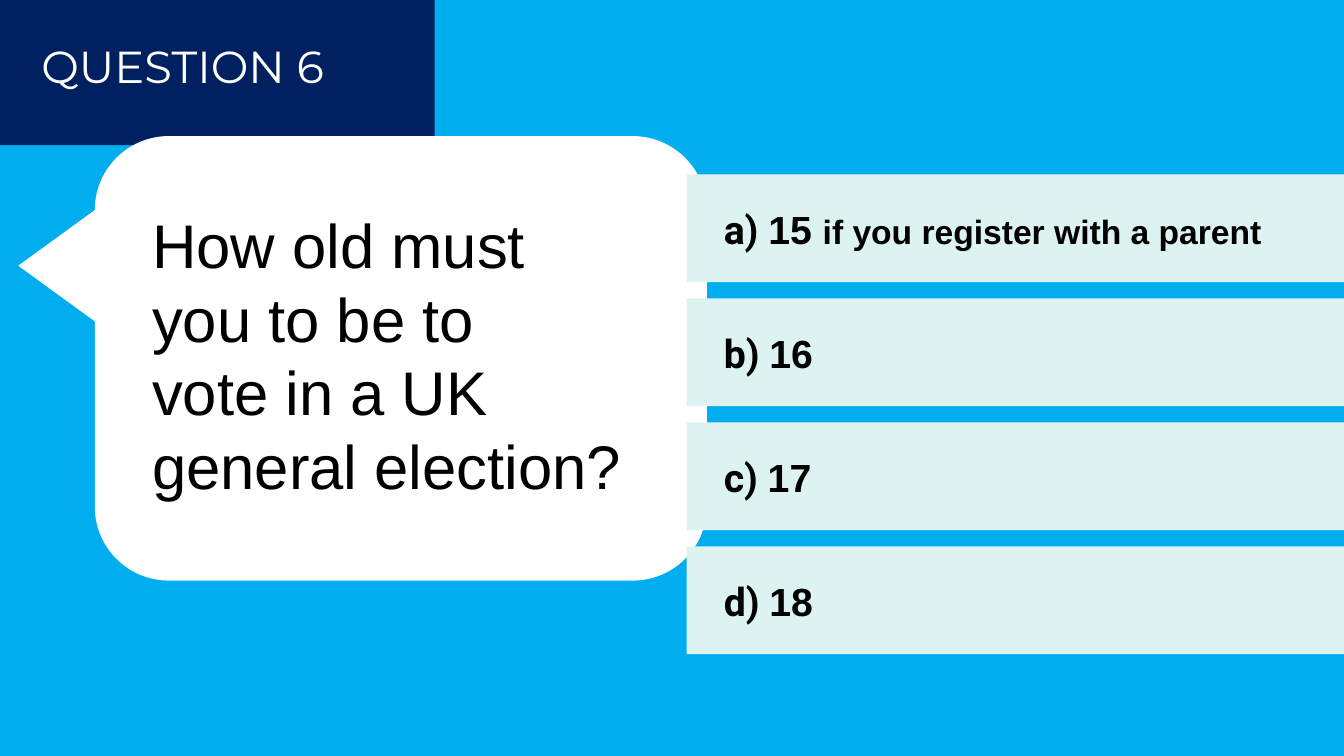
from dataclasses import dataclass

from pptx import Presentation
from pptx.dml.color import RGBColor
from pptx.enum.shapes import MSO_SHAPE
from pptx.enum.text import MSO_ANCHOR, MSO_AUTO_SIZE, PP_ALIGN
from pptx.shapes.autoshape import Shape
from pptx.slide import Slide
from pptx.text.text import TextFrame, _Paragraph
from pptx.util import Inches, Pt


@dataclass(frozen=True)
class Theme:
    background: str = "00AEEF"
    banner: str = "002060"
    white: str = "FFFFFF"
    option: str = "DDF3F1"
    text: str = "000000"
    title_font: str = "Montserrat"
    body_font: str = "Arial"
    letter_font: str = "Roboto"
    title_size: int = 32
    question_size: int = 44
    option_size: int = 28
    detail_size: int = 24


@dataclass(frozen=True)
class Box:
    left: float
    top: float
    width: float
    height: float


@dataclass(frozen=True)
class Option:
    letter: str
    answer: str
    detail: str = ""


THEME = Theme()
QUESTION = ["How old must you to be to ", "vote in a UK ", "general election?"]
OPTIONS = [
    Option("a) ", "15 ", "if you register with a parent"),
    Option("b) ", "16"),
    Option("c) ", "17"),
    Option("d) ", "18"),
]
OPTION_TOP, OPTION_STEP = 1.73, 1.23


def add_block(s: Slide, kind: MSO_SHAPE, box: Box, color: str) -> Shape:
    sp = s.shapes.add_shape(kind, Inches(box.left), Inches(box.top),
                            Inches(box.width), Inches(box.height))
    sp.shadow.inherit = False
    sp.fill.solid()
    sp.fill.fore_color.rgb = RGBColor.from_string(color)
    sp.line.fill.background()
    return sp


def add_text(s: Slide, box: Box) -> TextFrame:
    sp = s.shapes.add_textbox(Inches(box.left), Inches(box.top),
                              Inches(box.width), Inches(box.height))
    tf = sp.text_frame
    tf.word_wrap = True
    tf.auto_size = MSO_AUTO_SIZE.SHAPE_TO_FIT_TEXT
    return tf


def add_run(p: _Paragraph, text: str, font: str, size: int,
            color: str = THEME.text, bold: bool = False) -> None:
    r = p.add_run()
    r.text = text
    r.font.name = font
    r.font.size = Pt(size)
    r.font.bold = bold
    r.font.color.rgb = RGBColor.from_string(color)


def add_heading(s: Slide) -> None:
    banner = add_block(s, MSO_SHAPE.RECTANGLE, Box(0, 0, 4.31, 1.44), THEME.banner)
    title = s.shapes.title
    title.element.addprevious(banner.element)  # banner sits behind the title
    title.left, title.top = Inches(0.29), Inches(0.32)
    title.width, title.height = Inches(4.02), Inches(0.74)
    tf = title.text_frame
    tf.margin_left = tf.margin_right = tf.margin_top = tf.margin_bottom = Inches(0.12)
    tf.vertical_anchor = MSO_ANCHOR.TOP
    tf.word_wrap = True
    tf.auto_size = MSO_AUTO_SIZE.SHAPE_TO_FIT_TEXT
    p = tf.paragraphs[0]
    p.alignment = PP_ALIGN.LEFT
    p.line_spacing = 0.9
    add_run(p, "QUESTION 6", THEME.title_font, THEME.title_size, THEME.white)


def add_question(s: Slide) -> None:
    bubble = add_block(s, MSO_SHAPE.ROUNDED_RECTANGULAR_CALLOUT,
                       Box(1.77, 0.52, 4.41, 6.07), THEME.white)
    bubble.rotation = 90  # turns the pointer to the left
    p = add_text(s, Box(1.41, 2, 5.02, 3.06)).paragraphs[0]
    for i, line in enumerate(QUESTION):
        if i:
            p.add_line_break()
        add_run(p, line, THEME.body_font, THEME.question_size)


def add_option(s: Slide, option: Option, top: float) -> None:
    add_block(s, MSO_SHAPE.RECTANGLE, Box(6.81, top, 6.52, 1.07), THEME.option)
    p = add_text(s, Box(7.08, top + 0.26, 6.25, 0.57)).paragraphs[0]
    add_run(p, option.letter, THEME.letter_font, THEME.option_size, bold=True)
    add_run(p, option.answer, THEME.body_font, THEME.option_size, bold=True)
    if option.detail:
        add_run(p, option.detail, THEME.body_font, THEME.detail_size, bold=True)


def main() -> None:
    prs = Presentation()
    prs.slide_width, prs.slide_height = Inches(13.33), Inches(7.5)
    s = prs.slides.add_slide(prs.slide_layouts[5])
    s.background.fill.solid()
    s.background.fill.fore_color.rgb = RGBColor.from_string(THEME.background)

    # Heading and question
    add_heading(s)
    add_question(s)

    # Answer options, evenly spaced
    for i, option in enumerate(OPTIONS):
        add_option(s, option, OPTION_TOP + i * OPTION_STEP)

    prs.save("out.pptx")


if __name__ == "__main__":
    main()
